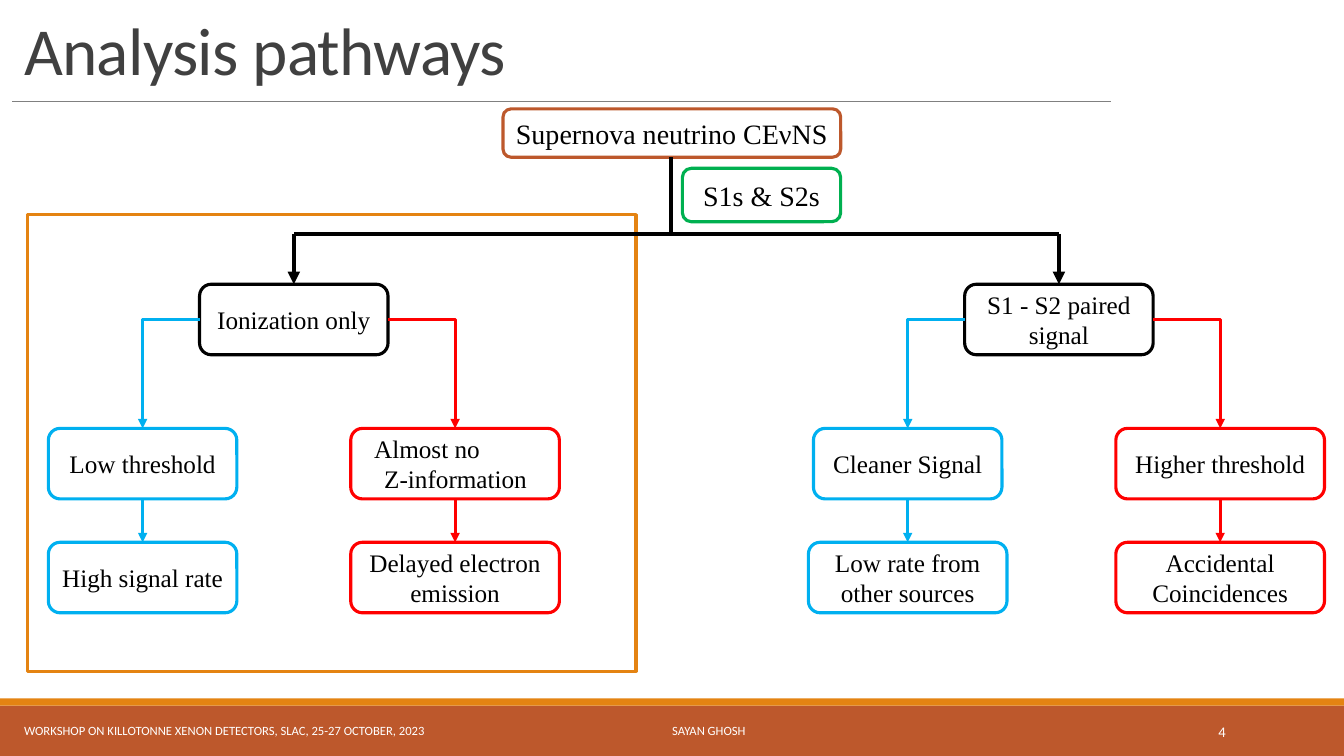
"""Build the "Analysis pathways" slide on a grid of tenth-of-an-inch cells."""
from dataclasses import dataclass

from lxml.etree import SubElement
from pptx import Presentation
from pptx.dml.color import RGBColor
from pptx.enum.shapes import MSO_CONNECTOR as Route, MSO_SHAPE as Preset
from pptx.enum.text import MSO_ANCHOR as Anchor, MSO_AUTO_SIZE as AutoSize, PP_ALIGN as Align
from pptx.oxml.ns import qn
from pptx.shapes.autoshape import Shape
from pptx.shapes.connector import Connector
from pptx.slide import Slide
from pptx.text.text import TextFrame
from pptx.util import Inches, Length, Pt


@dataclass(frozen=True)
class Theme:
    rust: str = "BD582C"
    orange: str = "E48312"
    grey: str = "808080"
    charcoal: str = "404040"
    white: str = "FFFFFF"
    black: str = "000000"
    blue: str = "00B0F0"
    red: str = "FF0000"
    green: str = "00B050"
    sans: str = "Calibri"
    serif: str = "Times New Roman"
    title_size: float = 48
    heading_size: float = 20
    node_size: float = 18
    footer_size: float = 9
    number_size: float = 10.5
    rule_width: float = 0.5
    outline_width: float = 2.25
    trunk_width: float = 3


@dataclass(frozen=True)
class Area:
    column: float
    row: float
    columns: float
    rows: float


@dataclass(frozen=True)
class Chain:
    texts: tuple[str, str]
    offset: float
    widths: tuple[float, float]
    color: str
    parent_side: int
    hanging: float = 0


@dataclass(frozen=True)
class Branch:
    text: str
    center: float
    chains: tuple[Chain, Chain]


THEME = Theme()
COLUMNS, ROWS = 133.33, 75
TOP, LEFT, BOTTOM, RIGHT = range(4)
NODE_ROWS, NODE_COLUMNS = 7, 18.7
BRANCH_ROW, CHAIN_ROWS = 28.2, (42.5, 53.8)
TRUNK_COLUMN, TRUNK_ROW, FORK_ROW = 66.6, 15.6, 23.2
AUTHOR_TAB = 64.3

BRANCHES = (
    Branch("Ionization only", 29.15, (
        Chain(("Low threshold", "High signal rate"), -15, (18.7, 18.7), THEME.blue, LEFT),
        Chain(("Almost no\vZ-information", "Delayed electron emission"), 16, (20.7, 20.7),
              THEME.red, RIGHT, hanging=1),
    )),
    Branch("S1 - S2 paired signal", 105.05, (
        Chain(("Cleaner Signal", "Low rate from other sources"), -15, (18.7, 19.7), THEME.blue, LEFT),
        Chain(("Higher threshold", "Accidental Coincidences"), 16, (20.7, 20.7), THEME.red, RIGHT),
    )),
)


def cells(count: float) -> Length:
    """Turn a number of grid cells into a length."""
    return Inches(count / 10)


def box(area: Area) -> tuple[Length, Length, Length, Length]:
    """Give the left, top, width and height of an area."""
    return cells(area.column), cells(area.row), cells(area.columns), cells(area.rows)


def write(frame: TextFrame, text: str, *, size: float, font: str = THEME.serif,
          color: str = THEME.black, align: Align = Align.CENTER, anchor: Anchor = Anchor.MIDDLE,
          wrap: bool = True, line_spacing: float = 1, tracking: int = 0,
          hanging: float = 0, tab: float = 0) -> None:
    """Put formatted text in a frame."""
    frame.auto_size = AutoSize.NONE
    frame.word_wrap = wrap
    frame.vertical_anchor = anchor
    paragraph = frame.paragraphs[0]
    paragraph.text = text
    paragraph.alignment = align
    paragraph.line_spacing = line_spacing
    properties = paragraph._p.get_or_add_pPr()
    if hanging:
        properties.set("marL", str(cells(2 * hanging)))
        properties.set("indent", str(-cells(hanging)))
    if tab:
        stops = SubElement(properties, qn("a:tabLst"))
        SubElement(stops, qn("a:tab"), pos=str(cells(tab)), algn="l")
    for run in paragraph.runs:
        run.font.size = Pt(size)
        run.font.name = font
        run.font.color.rgb = RGBColor.from_string(color)
        if tracking:
            run._r.get_or_add_rPr().set("spc", str(tracking))


def add_panel(slide: Slide, area: Area, *, fill: str | None = None, line: str | None = None,
              preset: Preset = Preset.RECTANGLE) -> Shape:
    """Draw a shape with an optional fill and outline."""
    shape = slide.shapes.add_shape(preset, *box(area))
    shape.shadow.inherit = False
    if fill:
        shape.fill.solid()
        shape.fill.fore_color.rgb = RGBColor.from_string(fill)
    else:
        shape.fill.background()
    if line:
        shape.line.color.rgb = RGBColor.from_string(line)
        shape.line.width = Pt(THEME.outline_width)
    else:
        shape.line.fill.background()
    return shape


def add_node(slide: Slide, text: str, center: float, row: float, columns: float,
             color: str, hanging: float = 0) -> Shape:
    """Draw a rounded box of the tree centred on a column."""
    area = Area(center - columns / 2, row, columns, NODE_ROWS)
    shape = add_panel(slide, area, fill=THEME.white, line=color, preset=Preset.ROUNDED_RECTANGLE)
    write(shape.text_frame, text, size=THEME.node_size, hanging=hanging,
          align=Align.LEFT if hanging else Align.CENTER)
    return shape


def style_line(connector: Connector, color: str, width: float, arrow: bool) -> None:
    """Colour a connector and remove its shadow."""
    connector.line.color.rgb = RGBColor.from_string(color)
    connector.line.width = Pt(width)
    if arrow:
        SubElement(connector.line._get_or_add_ln(), qn("a:tailEnd"), type="triangle")
    SubElement(connector._element.spPr, qn("a:effectLst"))


def add_line(slide: Slide, start: tuple[float, float], end: tuple[float, float],
             color: str = THEME.black, width: float = THEME.trunk_width, arrow: bool = False) -> None:
    """Draw a straight line between two grid points."""
    points = [cells(value) for value in (*start, *end)]
    style_line(slide.shapes.add_connector(Route.STRAIGHT, *points), color, width, arrow)


def link(slide: Slide, parent: Shape, side: int, child: Shape, color: str) -> None:
    """Join a side of one box to the top of another with an arrow."""
    route = Route.STRAIGHT if side == BOTTOM else Route.ELBOW
    connector = slide.shapes.add_connector(route, 0, 0, 0, 0)
    connector.begin_connect(parent, side)
    connector.end_connect(child, TOP)
    if route == Route.ELBOW:
        connector._element.spPr.find(qn("a:prstGeom")).set("prst", "bentConnector2")
    style_line(connector, color, THEME.outline_width, arrow=True)


def add_branch(slide: Slide, branch: Branch) -> None:
    """Draw one half of the tree with its arrows."""
    add_line(slide, (TRUNK_COLUMN, FORK_ROW), (branch.center, FORK_ROW))
    add_line(slide, (branch.center, FORK_ROW), (branch.center, BRANCH_ROW), arrow=True)
    root = add_node(slide, branch.text, branch.center, BRANCH_ROW, NODE_COLUMNS, THEME.black)
    for chain in branch.chains:
        parent, side, hanging = root, chain.parent_side, chain.hanging
        for text, row, columns in zip(chain.texts, CHAIN_ROWS, chain.widths):
            child = add_node(slide, text, branch.center + chain.offset, row, columns,
                             chain.color, hanging)
            link(slide, parent, side, child, chain.color)
            parent, side, hanging = child, BOTTOM, 0


def add_heading(slide: Slide, text: str, area: Area, color: str) -> None:
    """Draw an unfilled rounded heading box."""
    shape = add_panel(slide, area, line=color, preset=Preset.ROUNDED_RECTANGLE)
    write(shape.text_frame, text, size=THEME.heading_size, wrap=False)


def add_footer(slide: Slide) -> None:
    """Write the event, author and slide number on the footer band."""
    event = slide.shapes.add_textbox(*box(Area(1.4, 70.5, 87.8, 4)))
    write(event.text_frame, "WORKSHOP ON KILLOTONNE XENON DETECTORS, SLAC, 25-27 OCTOBER, 2023\tSAYAN GHOSH",
          size=THEME.footer_size, font=THEME.sans, color=THEME.white, align=Align.LEFT, tab=AUTHOR_TAB)
    number = slide.shapes.add_textbox(*box(Area(108.3, 70.6, 14.3, 4)))
    write(number.text_frame, "4", size=THEME.number_size, font=THEME.sans,
          color=THEME.white, align=Align.RIGHT)


def main() -> None:
    """Build and save the presentation."""
    presentation = Presentation()
    presentation.slide_width, presentation.slide_height = cells(COLUMNS), cells(ROWS)
    slide = presentation.slides.add_slide(presentation.slide_layouts[5])
    title = slide.shapes.title
    title.left, title.top, title.width, title.height = box(Area(1.4, 1.4, 115, 7.9))
    write(title.text_frame, "Analysis pathways", size=THEME.title_size, font=THEME.sans,
          color=THEME.charcoal, align=Align.LEFT, anchor=Anchor.BOTTOM, line_spacing=0.85, tracking=-50)
    add_panel(slide, Area(0, 70, COLUMNS, 5), fill=THEME.rust)
    add_panel(slide, Area(0, 69.3, COLUMNS, 0.7), fill=THEME.orange)
    add_line(slide, (1.2, 10.1), (110.2, 10.1), THEME.grey, THEME.rule_width)
    add_panel(slide, Area(2.7, 21.3, 60.4, 45.3), fill=THEME.white, line=THEME.orange)
    add_footer(slide)
    add_heading(slide, "Supernova neutrino CEνNS", Area(49.9, 10.8, 33.5, 4.8), THEME.rust)
    add_line(slide, (TRUNK_COLUMN, TRUNK_ROW), (TRUNK_COLUMN, FORK_ROW))
    for branch in BRANCHES:
        add_branch(slide, branch)
    add_heading(slide, "S1s & S2s", Area(67.7, 16.7, 15.7, 5.3), THEME.green)
    presentation.save("out.pptx")


if __name__ == "__main__":
    main()
